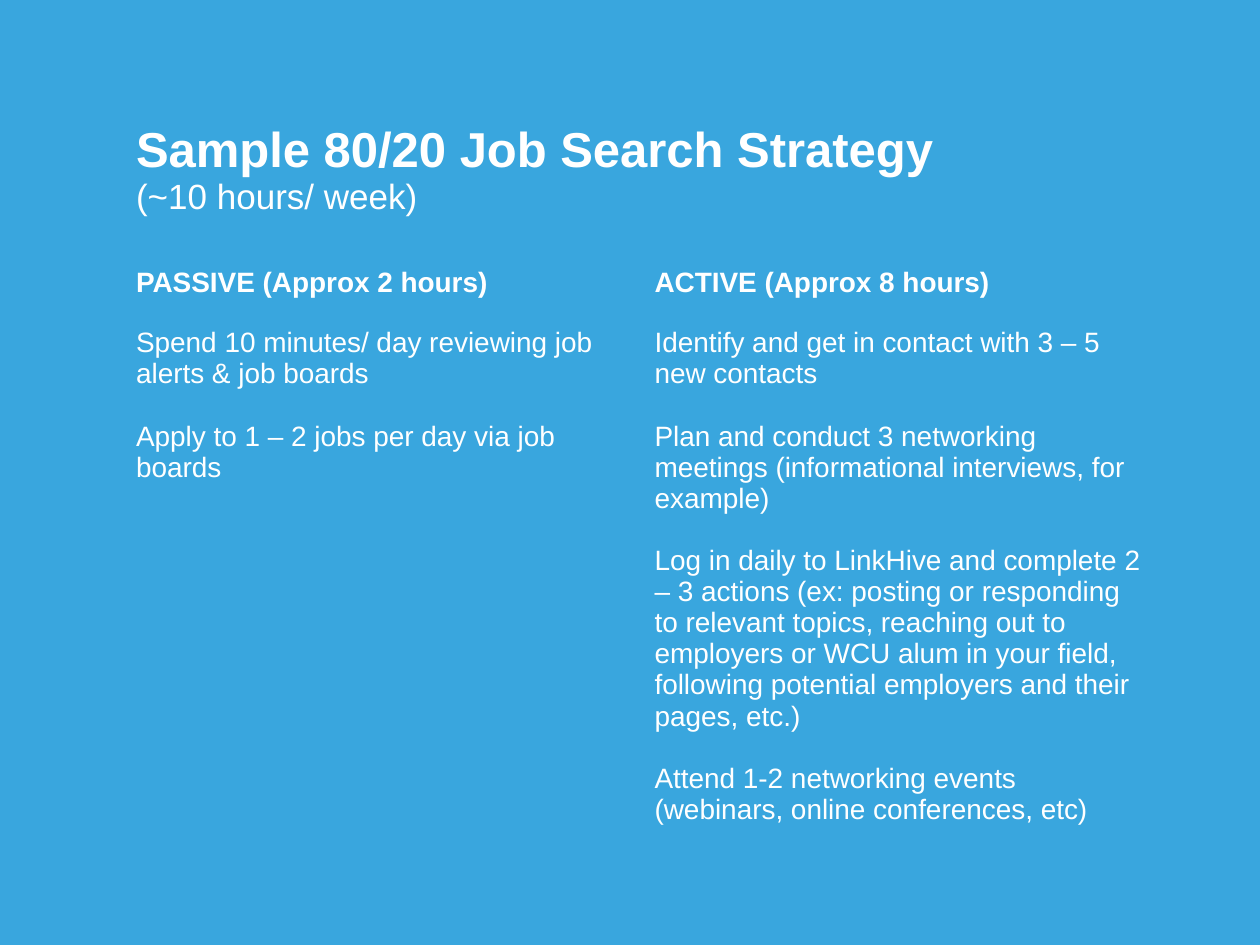
from pptx import Presentation
from pptx.dml.color import RGBColor
from pptx.oxml.ns import qn
from pptx.util import Inches, Pt

BLUE = RGBColor(0x39, 0xA6, 0xDE)
WHITE = RGBColor(0xFF, 0xFF, 0xFF)
FONT = "Arial"
NO_STYLE = "{2D5ABB26-0587-4C30-8999-92F81FD0307C}"
ITEM_GAP = Pt(17.8)

# Content
TITLE = "Sample 80/20 Job Search Strategy"
SUBTITLE = "(~10 hours/ week)"
COLUMNS = [
    ("PASSIVE (Approx 2 hours)", [
        "Spend 10 minutes/ day reviewing job alerts & job boards",
        "Apply to 1 – 2 jobs per day via job boards",
    ]),
    ("ACTIVE (Approx 8 hours)", [
        "Identify and get in contact with 3 – 5 new contacts",
        "Plan and conduct 3 networking meetings (informational interviews, "
        "for example)",
        "Log in daily to LinkHive and complete 2 – 3 actions (ex: posting or "
        "responding to relevant topics, reaching out to employers or WCU alum "
        "in your field, following potential employers and their pages, etc.)",
        "Attend 1-2 networking events (webinars, online conferences, etc)",
    ]),
]
ROW_HEIGHTS = [1.14, 0.48, 4.46]
LEFT, TOP, WIDTH = 0.98, 0.93, 8.23


def fill_cell(cell, lines, gap=Pt(0)):
    """Write (text, size, bold) lines, with a gap between paragraphs."""
    tf = cell.text_frame
    tf.text = "\n".join(text for text, _, _ in lines)
    for i, (p, (_, size, bold)) in enumerate(zip(tf.paragraphs, lines)):
        p.space_before = gap if i else Pt(0)
        font = p.runs[0].font
        font.name, font.size, font.bold = FONT, Pt(size), bold
        font.color.rgb = WHITE


prs = Presentation()
prs.slide_width, prs.slide_height = Inches(10), Inches(7.5)
s = prs.slides.add_slide(prs.slide_layouts[6])
s.background.fill.solid()
s.background.fill.fore_color.rgb = BLUE

# Table without style, borders or fills
table = s.shapes.add_table(
    len(ROW_HEIGHTS), len(COLUMNS), Inches(LEFT), Inches(TOP),
    Inches(WIDTH), Inches(sum(ROW_HEIGHTS))).table
table.first_row = table.horz_banding = False
table._tbl.tblPr.find(qn("a:tableStyleId")).text = NO_STYLE
for row, height in zip(table.rows, ROW_HEIGHTS):
    row.height = Inches(height)
for cell in table.iter_cells():
    cell.fill.background()

# Title across both columns
table.cell(0, 0).merge(table.cell(0, len(COLUMNS) - 1))
fill_cell(table.cell(0, 0), [(TITLE, 28, True), (SUBTITLE, 20, False)])

# Headings and activities
for col, (heading, items) in enumerate(COLUMNS):
    fill_cell(table.cell(1, col), [(heading, 16, True)])
    fill_cell(table.cell(2, col), [(item, 16, False) for item in items], ITEM_GAP)

prs.save("out.pptx")
